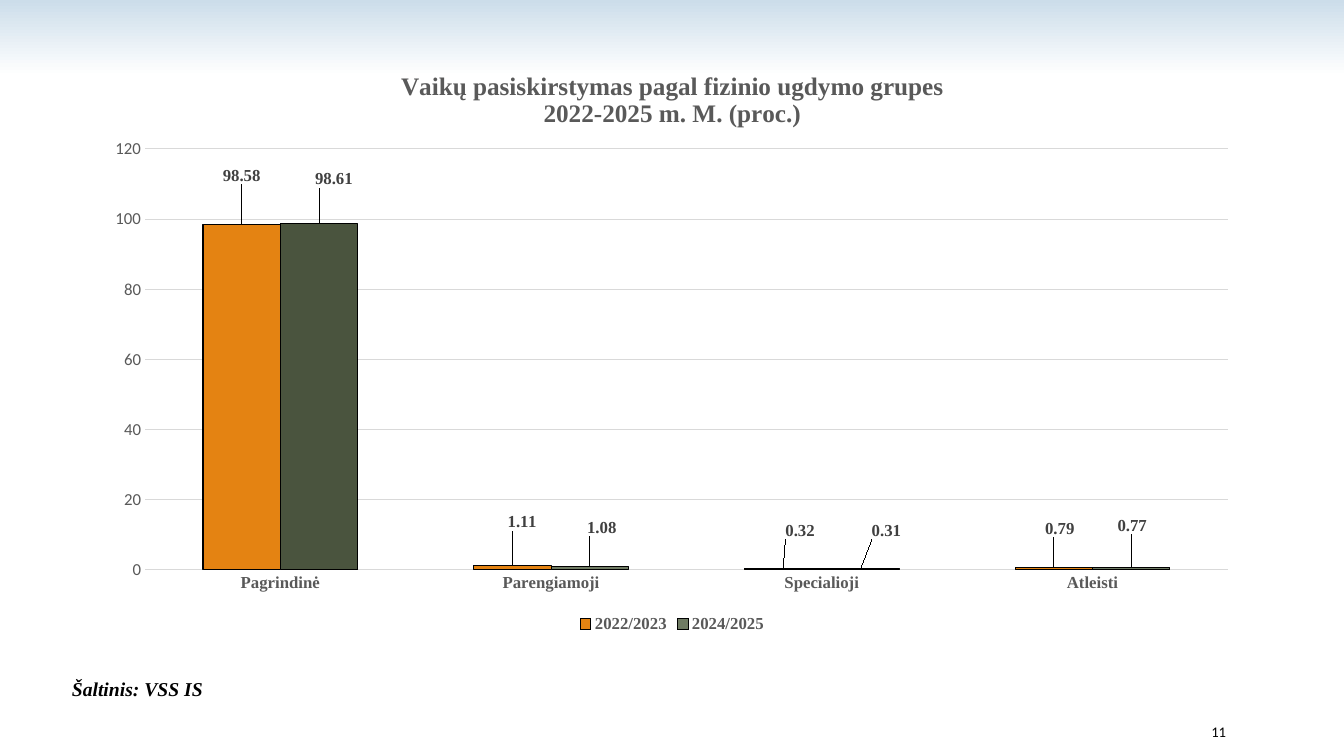
from typing import NamedTuple

from lxml import etree
from pptx import Presentation
from pptx import util as u
from pptx.chart.data import CategoryChartData
from pptx.dml.color import RGBColor
from pptx.enum import chart as charts, text
from pptx.oxml.ns import qn

EMU_PER_PX = 914400 / 100.8
SERIF, SANS = "Times New Roman", "Calibri"
GREY = "595959"
CHART_W, CHART_H = 1159, 592
CATEGORIES = ["Pagrindinė", "Parengiamoji", "Specialioji", "Atleisti"]


class YearSeries(NamedTuple):
    name: str
    color: str
    values: list[float]
    label_shifts: list[tuple[int, int]]  # px from the usual place above the bar


YEARS = [
    YearSeries("2022/2023", "E48312", [98.58, 1.11, 0.32, 0.79],
               [(0, -36), (10, -31), (17, -25), (6, -26)]),
    YearSeries("2024/2025", "6F7B63", [98.61, 1.08, 0.31, 0.77],
               [(15, -32), (12, -26), (26, -25), (1, -29)]),
]


def px(n: int) -> u.Emu:
    return u.Emu(round(n * EMU_PER_PX))


def rgb(color: str) -> RGBColor:
    return RGBColor.from_string(color)


def style(font, size: float, color: str, name: str = SERIF,
          bold: bool = True, italic: bool = False) -> None:
    font.size, font.name = u.Pt(size), name
    font.bold, font.italic = bold, italic
    font.color.rgb = rgb(color)


def add_text(slide, words: str, left: int, top: int, width: int, height: int, *,
             align=text.PP_ALIGN.LEFT, anchor=text.MSO_ANCHOR.TOP,
             wrap: bool = True, **font) -> None:
    tf = slide.shapes.add_textbox(px(left), px(top), px(width), px(height)).text_frame
    tf.word_wrap, tf.vertical_anchor = wrap, anchor
    p = tf.paragraphs[0]
    p.alignment = align
    r = p.add_run()
    r.text = words
    style(r.font, **font)


def manual_layout(inner: bool = False, edge: bool = True, **px_places: int):
    """Chart layout element from px lengths keyed x, y, w, h."""
    layout = etree.Element(qn("c:layout"))
    manual = etree.SubElement(layout, qn("c:manualLayout"))
    settings = {"layoutTarget": "inner"} if inner else {}
    if edge:
        settings |= {"xMode": "edge", "yMode": "edge"}
    for key, n in px_places.items():
        settings[key] = f"{n / (CHART_W if key in 'xw' else CHART_H):.4f}"
    for key, value in settings.items():
        etree.SubElement(manual, qn(f"c:{key}")).set("val", value)
    return layout


def set_layout(parent, layout, index: int) -> None:
    for old in parent.findall(qn("c:layout")):
        parent.remove(old)
    parent.insert(index, layout)


def format_series(series, year: YearSeries) -> None:
    def paint(fmt, color: str) -> None:
        fmt.fill.solid()
        fmt.fill.fore_color.rgb = rgb(color)
        fmt.line.color.rgb = rgb("000000")
        fmt.line.width = u.Pt(0.75)

    paint(series.format, year.color)
    series.invert_if_negative = False
    labels = series.data_labels
    labels.show_value = True
    labels.position = charts.XL_LABEL_POSITION.OUTSIDE_END
    style(labels.font, 12, "404040")
    for i, (dx, dy) in enumerate(year.label_shifts):
        label = series.points[i].data_label
        style(label.font, 12, "404040")
        label.position = charts.XL_LABEL_POSITION.OUTSIDE_END
    for dlbl, (dx, dy) in zip(labels._element.findall(qn("c:dLbl")), year.label_shifts):
        set_layout(dlbl, manual_layout(edge=False, x=dx, y=dy), 1)
    if year is YEARS[1]:
        paint(series.points[0].format, "4A543E")


def add_group_chart(slide) -> None:
    data = CategoryChartData()
    data.categories = CATEGORIES
    for year in YEARS:
        data.add_series(year.name, year.values)
    chart = slide.shapes.add_chart(charts.XL_CHART_TYPE.COLUMN_CLUSTERED,
                                   px(93), px(45), px(CHART_W), px(CHART_H), data).chart
    style(chart.font, 10, "000000", SANS, bold=False)

    # Title
    tf = chart.chart_title.text_frame
    lines = ["Vaikų pasiskirstymas pagal fizinio ugdymo grupes", "2022-2025 m. M. (proc.)"]
    for i, line in enumerate(lines):
        p = tf.add_paragraph() if i else tf.paragraphs[0]
        r = p.add_run()
        r.text = line
        style(r.font, 18, GREY)
    chart.chart_title.include_in_layout = False
    set_layout(chart.chart_title._element, manual_layout(x=305, y=23), 1)

    # Plot and series
    plot = chart.plots[0]
    plot.gap_width, plot.overlap, plot.vary_by_categories = 150, 0, False
    for series, year in zip(plot.series, YEARS):
        format_series(series, year)
    plot_area = chart.element.find(".//" + qn("c:plotArea"))
    set_layout(plot_area, manual_layout(inner=True, x=52, y=104, w=1083, h=421), 0)

    # Axes
    for axis in (chart.category_axis, chart.value_axis):
        axis.major_tick_mark = axis.minor_tick_mark = charts.XL_TICK_MARK.NONE
        axis.format.line.fill.background()
    style(chart.category_axis.tick_labels.font, 12, GREY)
    values = chart.value_axis
    style(values.tick_labels.font, 12, GREY, SANS, bold=False)
    values.minimum_scale, values.maximum_scale, values.major_unit = 0, 120, 20
    values.major_gridlines.format.line.color.rgb = rgb("D9D9D9")
    values.major_gridlines.format.line.width = u.Pt(0.75)

    # Legend
    chart.has_legend = True
    chart.legend.position = charts.XL_LEGEND_POSITION.BOTTOM
    chart.legend.include_in_layout = False
    style(chart.legend.font, 12, GREY)


def main() -> None:
    prs = Presentation()
    prs.slide_width, prs.slide_height = px(1344), px(756)
    slide = prs.slides.add_slide(prs.slide_layouts[6])

    # Background fading to white in the top tenth
    fill = slide.background.fill
    fill.gradient()
    fill.gradient_angle = 270
    for stop, color, position in zip(fill.gradient_stops, ("CCDDEA", "FFFFFF"), (0, 0.1)):
        stop.color.rgb = rgb(color)
        stop.position = position

    add_group_chart(slide)

    # Page number and source
    add_text(slide, "11", 1092, 712, 144, 40, align=text.PP_ALIGN.RIGHT,
             anchor=text.MSO_ANCHOR.MIDDLE, size=10.5, color="000000", name=SANS, bold=False)
    add_text(slide, "Šaltinis: VSS IS", 62, 672, 152, 34, wrap=False,
             size=14, color="000000", italic=True)
    prs.save("out.pptx")


if __name__ == "__main__":
    main()
